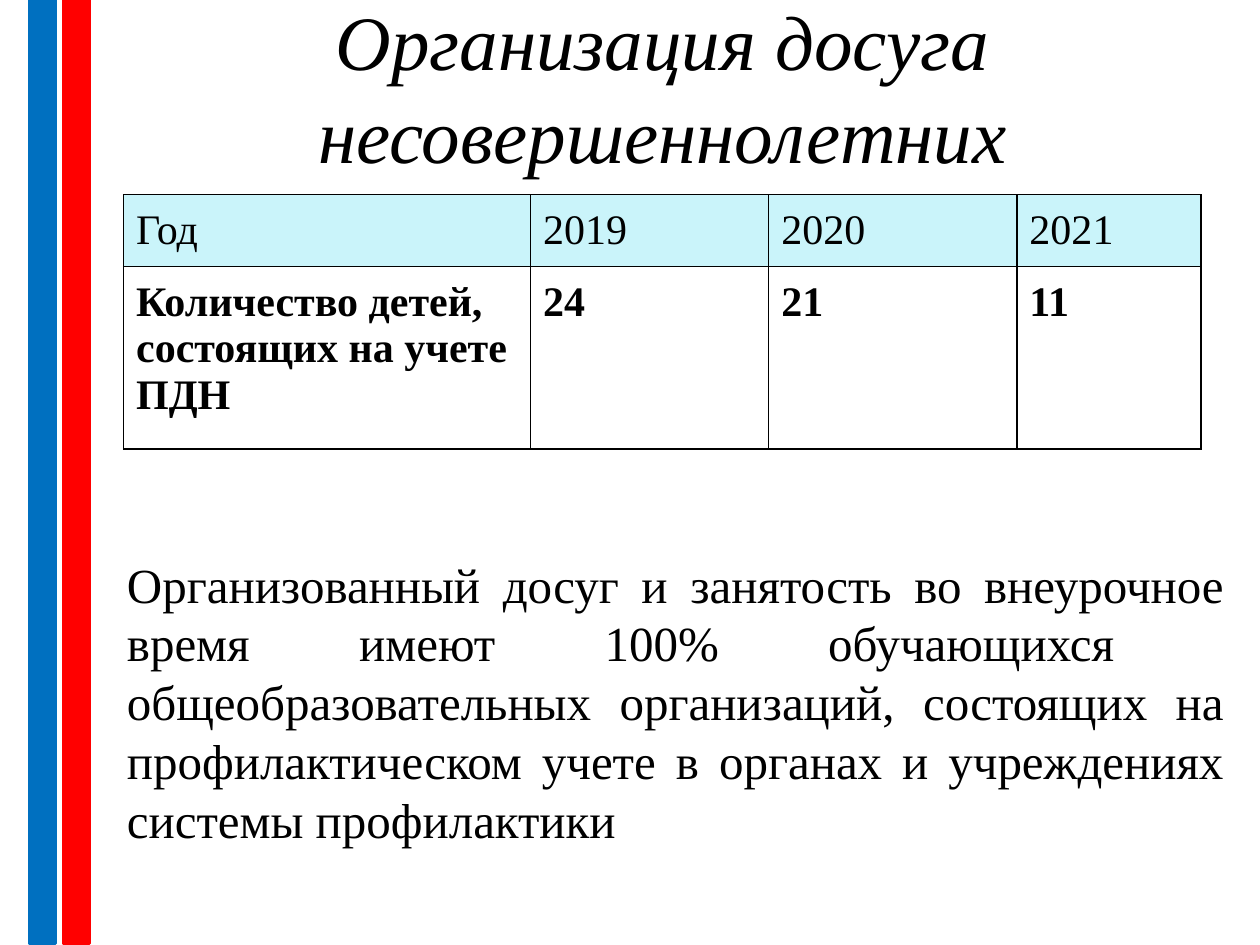
from lxml.etree import SubElement
from pptx import Presentation
from pptx.dml.color import RGBColor
from pptx.enum.shapes import MSO_SHAPE
from pptx.enum.text import MSO_ANCHOR, PP_ALIGN
from pptx.oxml.ns import qn
from pptx.util import Pt

COLORS = {"ink": "000000", "blue": "0070C0", "red": "FF0000", "head": "CAF4FA"}


class Deck:
    """Hold the style and the current slide."""

    font = "Times New Roman"

    def __init__(self, width, height):
        self.prs = Presentation()
        self.prs.slide_width, self.prs.slide_height = Pt(width), Pt(height)
        self.slide = self.prs.slides.add_slide(self.prs.slide_layouts[5])

    def color(self, name):
        return RGBColor.from_string(COLORS[name])

    def label(self, frame, text, size, align, bold=False, italic=False):
        frame.word_wrap = True
        para = frame.paragraphs[0]
        para.text = text
        para.alignment = align
        font = para.font
        font.name, font.size = self.font, Pt(size)
        font.bold, font.italic = bold, italic
        font.color.rgb = self.color("ink")

    def title(self, text, box):
        shape = self.slide.shapes.title
        shape.left, shape.top, shape.width, shape.height = map(Pt, box)
        shape.text_frame.vertical_anchor = MSO_ANCHOR.MIDDLE
        self.label(shape.text_frame, text, 44, PP_ALIGN.CENTER, italic=True)

    def stripe(self, left, name):
        shape = self.slide.shapes.add_shape(
            MSO_SHAPE.RECTANGLE, Pt(left), Pt(-0.7), Pt(14.4), Pt(540))
        shape.shadow.inherit = False
        shape.fill.solid()
        shape.fill.fore_color.rgb = shape.line.color.rgb = self.color(name)
        shape.line.width = Pt(2)

    def text(self, text, box):
        frame = self.slide.shapes.add_textbox(*map(Pt, box)).text_frame
        frame.vertical_anchor = MSO_ANCHOR.MIDDLE
        self.label(frame, text, 28, PP_ALIGN.JUSTIFY)

    def border(self, cell):
        props = cell._tc.get_or_add_tcPr()
        for spot, side in enumerate(("lnL", "lnR", "lnT", "lnB")):
            line = SubElement(props, qn(f"a:{side}"), w=str(Pt(1)))
            fill = SubElement(line, qn("a:solidFill"))
            SubElement(fill, qn("a:srgbClr"), val=COLORS["ink"])
            props.insert(spot, line)

    def table(self, rows, left, top, widths, heights):
        table = self.slide.shapes.add_table(
            len(rows), len(widths), Pt(left), Pt(top),
            Pt(sum(widths)), Pt(sum(heights))).table
        for col, width in zip(table.columns, widths):
            col.width = Pt(width)
        for i, (row, height) in enumerate(zip(rows, heights)):
            table.rows[i].height = Pt(height)
            for j, text in enumerate(row):
                cell = table.cell(i, j)
                cell.margin_left = cell.margin_right = Pt(7.2)
                cell.margin_top = cell.margin_bottom = Pt(7.2)
                if i:
                    cell.fill.background()
                else:
                    cell.fill.solid()
                    cell.fill.fore_color.rgb = self.color("head")
                self.border(cell)
                self.label(cell.text_frame, text, 24, PP_ALIGN.LEFT, bold=i > 0)


def main():
    deck = Deck(720, 540)
    deck.title("Организация досуга несовершеннолетних", (65.5, 4.3, 626.4, 90))
    deck.stripe(17.3, "blue")
    deck.stripe(36.7, "red")
    rows = [
        ("Год", "2019", "2020", "2021"),
        ("Количество детей, состоящих на учете ПДН", "24", "21", "11"),
    ]
    deck.table(rows, 70.6, 111.3, (232.6, 136.1, 141.8, 105.1), (41, 104.4))
    deck.text(
        "Организованный досуг и занятость во внеурочное время имеют 100% "
        "обучающихся  общеобразовательных организаций, состоящих на "
        "профилактическом учете в органах и учреждениях системы профилактики",
        (65.5, 304.6, 640.8, 192.2))
    deck.prs.save("out.pptx")


if __name__ == "__main__":
    main()
